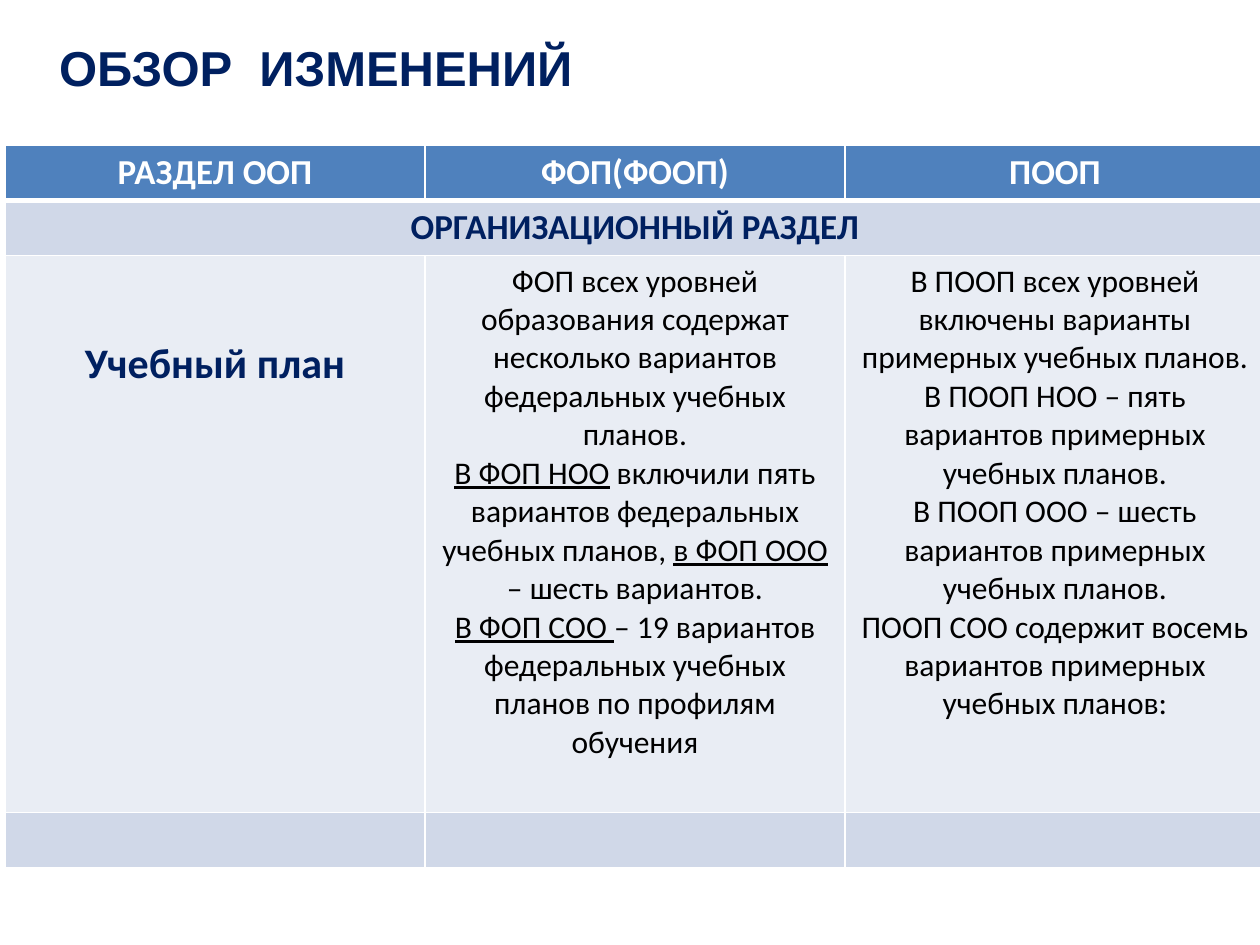
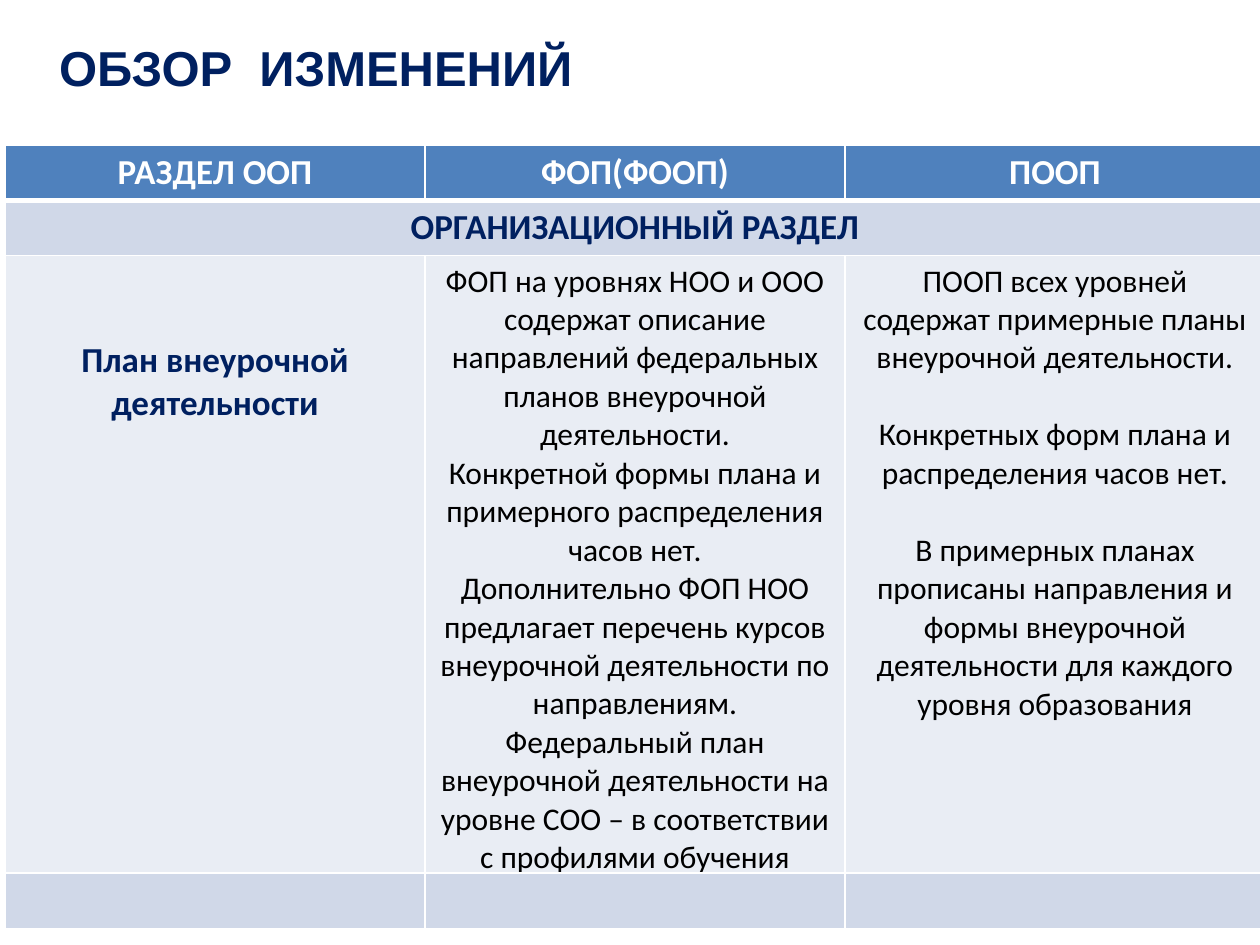
import pptx
import pptx.dml.color
import pptx.enum.text
import pptx.oxml
import pptx.oxml.ns
import pptx.util

Inches = pptx.util.Inches
Pt = pptx.util.Pt
RGBColor = pptx.dml.color.RGBColor

NAVY = RGBColor(0x00, 0x20, 0x60)
BLACK = RGBColor(0x00, 0x00, 0x00)
WHITE = RGBColor(0xFF, 0xFF, 0xFF)
HEADER_BLUE = RGBColor(0x4F, 0x81, 0xBD)
BAND_DARK = RGBColor(0xD0, 0xD8, 0xE8)
BAND_LIGHT = RGBColor(0xE9, 0xED, 0xF4)

TITLE = {"name": "Arial", "size": Pt(28), "bold": True}
HEADING = {"name": "Calibri", "size": Pt(20), "bold": True}
LARGE_HEADING = {**HEADING, "size": Pt(24)}
BODY = {"name": "Calibri", "size": Pt(18), "bold": False}

COLUMNS = ["РАЗДЕЛ ООП", "ФОП(ФООП)", "ПООП"]
ROW_HEIGHT = 0.44
LABEL_TOP = 0.66
BLANK_LINE = Pt(22)

CURRICULUM_FOP = [
    "ФОП всех уровней образования содержат несколько вариантов федеральных учебных планов.",
    "_В ФОП НОО_ включили пять вариантов федеральных учебных планов, _в ФОП ООО _– шесть вариантов.",
    "_В ФОП СОО _– 19 вариантов федеральных учебных планов по профилям обучения",
]
CURRICULUM_POOP = [
    "В ПООП всех уровней включены варианты примерных учебных планов.",
    "В ПООП НОО – пять вариантов примерных учебных планов.",
    "В ПООП ООО – шесть вариантов примерных учебных планов.",
    "ПООП СОО содержит восемь вариантов примерных учебных планов:",
]
ACTIVITIES_FOP = [
    "ФОП на уровнях НОО и ООО содержат описание направлений федеральных планов внеурочной деятельности.",
    "Конкретной формы плана и примерного распределения часов нет.",
    "Дополнительно ФОП НОО предлагает перечень курсов внеурочной деятельности по направлениям. "
    "Федеральный план внеурочной деятельности на уровне СОО – в соответствии с профилями обучения",
]
ACTIVITIES_POOP = [
    "ПООП всех уровней содержат примерные планы внеурочной деятельности.",
    "Конкретных форм плана и распределения часов нет.",
    "В примерных планах прописаны направления и формы внеурочной деятельности для каждого уровня образования",
]


def add_runs(p, text, style, color):
    for i, part in enumerate(text.split("_")):
        if not part:
            continue
        r = p.add_run()
        r.text = part
        for name, value in style.items():
            setattr(r.font, name, value)
        r.font.color.rgb = color
        if i % 2:
            r.font.underline = True


def add_title(s, text):
    sp = s.shapes.add_textbox(Inches(0.37), Inches(0.25), Inches(9.25), Inches(0.57))
    tf = sp.text_frame
    tf.word_wrap = True
    add_runs(tf.paragraphs[0], text, TITLE, NAVY)


def set_borders(cell, bottom):
    tc_pr = cell._tc.get_or_add_tcPr()
    for i, (side, width) in enumerate([("L", 1), ("R", 1), ("T", 1), ("B", bottom)]):
        tc_pr.insert(i, pptx.oxml.parse_xml(
            f'<a:ln{side} {pptx.oxml.ns.nsdecls("a")} w="{Pt(width)}">'
            f'<a:solidFill><a:srgbClr val="{WHITE}"/></a:solidFill></a:ln{side}>'))


def fill_cell(cell, paragraphs, style, color, gap=Pt(0)):
    tf = cell.text_frame
    for i, text in enumerate(paragraphs):
        p = tf.add_paragraph() if i else tf.paragraphs[0]
        p.alignment = pptx.enum.text.PP_ALIGN.CENTER
        if i:
            p.space_before = gap
        add_runs(p, text, style, color)


def add_comparison(s, body_height, label, label_style, fop, poop, poop_gap=Pt(0)):
    heights = [ROW_HEIGHT, ROW_HEIGHT, body_height, ROW_HEIGHT]
    fills = [HEADER_BLUE, BAND_DARK, BAND_LIGHT, BAND_DARK]
    table = s.shapes.add_table(len(heights), len(COLUMNS), Inches(0.04), Inches(1.15),
                               Inches(10), Inches(sum(heights))).table
    table.first_row = False
    table.horz_banding = False
    for i, (height, fill) in enumerate(zip(heights, fills)):
        table.rows[i].height = Inches(height)
        for cell in table.rows[i].cells:
            cell.fill.solid()
            cell.fill.fore_color.rgb = fill
            set_borders(cell, 1 if i else 3)
    for j, heading in enumerate(COLUMNS):
        fill_cell(table.cell(0, j), [heading], HEADING, WHITE)
        table.cell(2, j).margin_bottom = 0
    table.cell(1, 0).merge(table.cell(1, len(COLUMNS) - 1))
    fill_cell(table.cell(1, 0), ["ОРГАНИЗАЦИОННЫЙ РАЗДЕЛ"], HEADING, NAVY)
    table.cell(2, 0).margin_top = Inches(LABEL_TOP)
    fill_cell(table.cell(2, 0), [label], label_style, NAVY)
    fill_cell(table.cell(2, 1), fop, BODY, BLACK)
    fill_cell(table.cell(2, 2), poop, BODY, BLACK, poop_gap)


def add_review_slide(prs, *comparison):
    s = prs.slides.add_slide(prs.slide_layouts[6])
    add_title(s, "ОБЗОР  ИЗМЕНЕНИЙ")
    add_comparison(s, *comparison)


def main():
    prs = pptx.Presentation()
    prs.slide_width = Inches(10)
    prs.slide_height = Inches(7.5)
    add_review_slide(prs, 4.42, "Учебный план", LARGE_HEADING,
                     CURRICULUM_FOP, CURRICULUM_POOP)
    add_review_slide(prs, 4.9, "План внеурочной деятельности", HEADING,
                     ACTIVITIES_FOP, ACTIVITIES_POOP, BLANK_LINE)
    prs.save("out.pptx")


if __name__ == "__main__":
    main()
